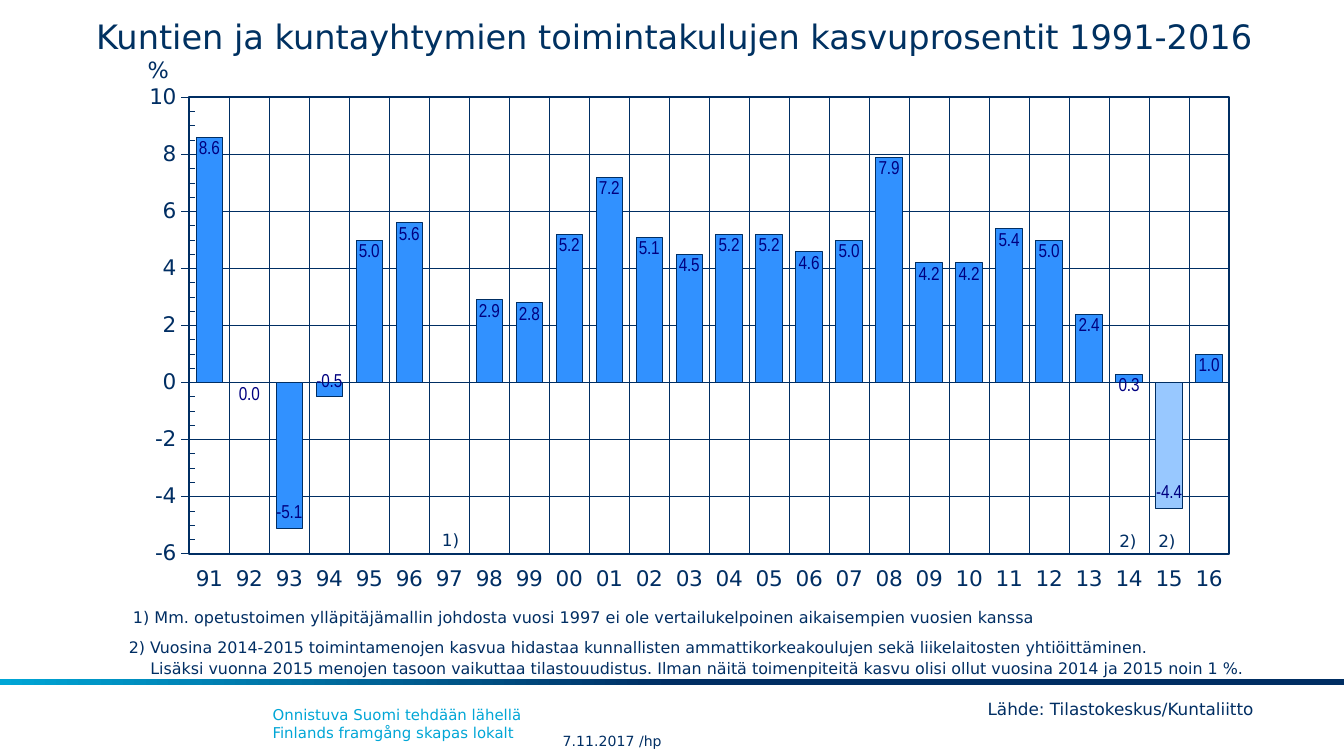
"""Build the slide on yearly growth of municipal operating costs."""
from dataclasses import dataclass

import pptx
import pptx.chart.data
import pptx.dml.color
import pptx.enum.chart
import pptx.enum.shapes
import pptx.enum.text
import pptx.oxml
import pptx.util
from pptx.util import Inches

NAVY, CYAN, BLUE, PALE_BLUE, LABEL_BLUE = "002E63", "00A6D6", "3191FF", "98C8FF", "000080"
SANS = "DejaVu Sans"
LEFT, CENTER = pptx.enum.text.PP_ALIGN.LEFT, pptx.enum.text.PP_ALIGN.CENTER
TOP, MIDDLE, BOTTOM = (
    pptx.enum.text.MSO_ANCHOR.TOP,
    pptx.enum.text.MSO_ANCHOR.MIDDLE,
    pptx.enum.text.MSO_ANCHOR.BOTTOM,
)
FIRST_YEAR, LAST_YEAR = 1991, 2016
GROWTH = [
    8.6, 0, -5.1, -0.5, 5, 5.6, None, 2.9, 2.8, 5.2, 7.2, 5.1, 4.5,
    5.2, 5.2, 4.6, 5, 7.9, 4.2, 4.2, 5.4, 5, 2.4, 0.3, -4.4, 1,
]
PLOT_LAYOUT = {"x": 0.04, "y": 0.02, "w": 0.95, "h": 0.89}
PLOT_LAYOUT = {"x": 0.043, "y": 0.021, "w": 0.954, "h": 0.89}


@dataclass
class Box:
    """Place of an element in inches."""
    left: float
    top: float
    width: float
    height: float

    def lengths(self) -> tuple:
        """Return the place as lengths."""
        return tuple(Inches(v) for v in (self.left, self.top, self.width, self.height))


@dataclass
class Mark:
    """Short unwrapped text placed on or beside the chart."""
    text: str
    box: Box
    size: float = 9


MARKS = [
    Mark("%", Box(1, 0.37, 0.38, 0.3), 12),
    Mark("1)", Box(3.19, 3.89, 0.34, 0.25)),
    Mark("2)", Box(8.23, 3.9, 0.34, 0.25)),
    Mark("2)", Box(8.52, 3.9, 0.34, 0.25)),
    Mark("Lähde: Tilastokeskus/Kuntaliitto", Box(7.25, 5.15, 2.78, 0.25)),
]


def rgb(value: str) -> pptx.dml.color.RGBColor:
    """Turn a hex string into a colour."""
    return pptx.dml.color.RGBColor.from_string(value)


def set_font(font, size: float, color: str = NAVY, name: str = SANS) -> None:
    """Format a font."""
    font.size, font.name, font.bold = pptx.util.Pt(size), name, False
    font.color.rgb = rgb(color)


def set_line(line, width: float = 0.25) -> None:
    """Give a line the navy colour and a width in points."""
    line.color.rgb = rgb(NAVY)
    line.width = pptx.util.Pt(width)


def add_text(slide, text: str, box: Box, size: float = 9, color: str = NAVY, wrap: bool = True,
             align=LEFT, anchor=TOP, inset: bool = True, spacing: float = 1.0,
             indents: tuple = (0,)) -> None:
    """Add a text box with one paragraph per indent, or one with line breaks."""
    frame = slide.shapes.add_textbox(*box.lengths()).text_frame
    frame.word_wrap, frame.vertical_anchor = wrap, anchor
    if not inset:
        frame.margin_left = frame.margin_right = frame.margin_top = frame.margin_bottom = 0
    parts = text.split("\n") if len(indents) > 1 else [text]
    for index, (part, indent) in enumerate(zip(parts, indents)):
        paragraph = frame.add_paragraph() if index else frame.paragraphs[0]
        paragraph.text = part
        paragraph.alignment, paragraph.line_spacing = align, spacing
        if indent:
            paragraph._p.get_or_add_pPr().set("marL", str(Inches(indent)))
        for run in paragraph.runs:
            set_font(run.font, size, color)


def add_band(slide, box: Box) -> None:
    """Add the gradient band above the footer."""
    band = slide.shapes.add_shape(pptx.enum.shapes.MSO_SHAPE.RECTANGLE, *box.lengths())
    band.shadow.inherit = False
    band.line.fill.background()
    band.fill.gradient()
    band.fill.gradient_angle = 180
    for stop, position, color in zip(band.fill.gradient_stops, (0.5, 1), (NAVY, CYAN)):
        stop.position, stop.color.rgb = position, rgb(color)


def format_axis(axis) -> None:
    """Give an axis its font, line and gridlines."""
    set_font(axis.tick_labels.font, 11.6)
    set_line(axis.format.line)
    axis.has_major_gridlines = True
    set_line(axis.major_gridlines.format.line)
    axis.major_tick_mark = pptx.enum.chart.XL_TICK_MARK.OUTSIDE


def frame_plot(chart) -> None:
    """Fix the inner plot area and outline it."""
    namespaces = " ".join(pptx.oxml.ns.nsdecls(prefix) for prefix in ("c", "a"))
    modes = "".join(f'<c:{key}Mode val="edge"/>' for key in "xy")
    sizes = "".join(f'<c:{key} val="{value}"/>' for key, value in PLOT_LAYOUT.items())
    plot_area = chart._chartSpace.chart.plotArea
    for layout in plot_area.findall(pptx.oxml.ns.qn("c:layout")):
        plot_area.remove(layout)
    plot_area.insert(0, pptx.oxml.parse_xml(
        f'<c:layout {namespaces}><c:manualLayout><c:layoutTarget val="inner"/>'
        f'{modes}{sizes}</c:manualLayout></c:layout>'))
    plot_area.append(pptx.oxml.parse_xml(
        f'<c:spPr {namespaces}><a:noFill/><a:ln w="{pptx.util.Pt(1)}"><a:solidFill>'
        f'<a:srgbClr val="{NAVY}"/></a:solidFill></a:ln></c:spPr>'))


def add_growth_chart(slide, box: Box) -> None:
    """Add the column chart of yearly growth."""
    data = pptx.chart.data.CategoryChartData(number_format="0.0")
    data.categories = [f"{year % 100:02d}" for year in range(FIRST_YEAR, LAST_YEAR + 1)]
    data.add_series("Series 1", GROWTH)
    chart = slide.shapes.add_chart(
        pptx.enum.chart.XL_CHART_TYPE.COLUMN_STACKED, *box.lengths(), data).chart
    chart.has_legend = chart.has_title = False
    set_font(chart.font, 11.6)

    years, percent = chart.category_axis, chart.value_axis
    format_axis(years)
    format_axis(percent)
    years.tick_label_position = pptx.enum.chart.XL_TICK_LABEL_POSITION.LOW
    percent.minimum_scale, percent.maximum_scale = -6, 10
    percent.major_unit, percent.minor_unit = 2, 0.5
    percent.minor_tick_mark = pptx.enum.chart.XL_TICK_MARK.INSIDE
    percent.tick_labels.number_format = "0"
    percent.tick_labels.number_format_is_linked = False

    plot = chart.plots[0]
    plot.gap_width, plot.overlap, plot.vary_by_categories = 50, 100, False
    growth = plot.series[0]
    growth.invert_if_negative = False
    growth.format.fill.solid()
    growth.format.fill.fore_color.rgb = rgb(BLUE)
    set_line(growth.format.line)
    reformed = growth.points[2015 - FIRST_YEAR].format
    reformed.fill.solid()
    reformed.fill.fore_color.rgb = rgb(PALE_BLUE)
    set_line(reformed.line)

    labels = growth.data_labels
    labels.show_value = True
    labels.number_format, labels.number_format_is_linked = "0.0", False
    labels.position = pptx.enum.chart.XL_LABEL_POSITION.INSIDE_END
    set_font(labels.font, 10, LABEL_BLUE, "Arial Narrow")
    frame_plot(chart)


def main() -> None:
    """Build and save the slide."""
    deck = pptx.Presentation()
    deck.slide_width = Inches(10)
    deck.slide_height = deck.slide_width * 9 // 16
    slide = deck.slides.add_slide(deck.slide_layouts[6])
    add_band(slide, Box(0, 5.05, 10, 0.05))
    add_text(slide, "Onnistuva Suomi tehdään lähellä\nFinlands framgång skapas lokalt",
             Box(1.93, 5.2, 6.54, 0.37), size=8, color=CYAN)
    add_text(slide, "1) Mm. opetustoimen ylläpitäjämallin johdosta vuosi 1997 ei ole "
             "vertailukelpoinen aikaisempien vuosien kanssa",
             Box(0.89, 4.47, 7.26, 0.25), size=8.6)
    add_text(slide, "Kuntien ja kuntayhtymien toimintakulujen kasvuprosentit 1991-2016",
             Box(0.55, 0.14, 8.94, 0.29), size=18, color="003161", align=CENTER,
             inset=False, spacing=0.95)
    add_growth_chart(slide, Box(1.06, 0.63, 8.11, 3.83))
    for mark in MARKS:
        add_text(slide, mark.text, mark.box, size=mark.size, wrap=False)
    add_text(slide, "7.11.2017 /hp", Box(3.96, 5.4, 1.19, 0.22), size=7.5,
             align=CENTER, anchor=MIDDLE, inset=False)
    add_text(slide, "2) Vuosina 2014-2015 toimintamenojen kasvua hidastaa kunnallisten "
             "ammattikorkeakoulujen sekä liikelaitosten yhtiöittäminen.\n"
             "Lisäksi vuonna 2015 menojen tasoon vaikuttaa tilastouudistus. Ilman näitä "
             "toimenpiteitä kasvu olisi ollut vuosina 2014 ja 2015 noin 1 %.",
             Box(0.83, 4.71, 8.89, 0.38), size=8.5, anchor=BOTTOM, spacing=1.1,
             indents=(0.03, 0.19))
    deck.save("out.pptx")


if __name__ == "__main__":
    main()
